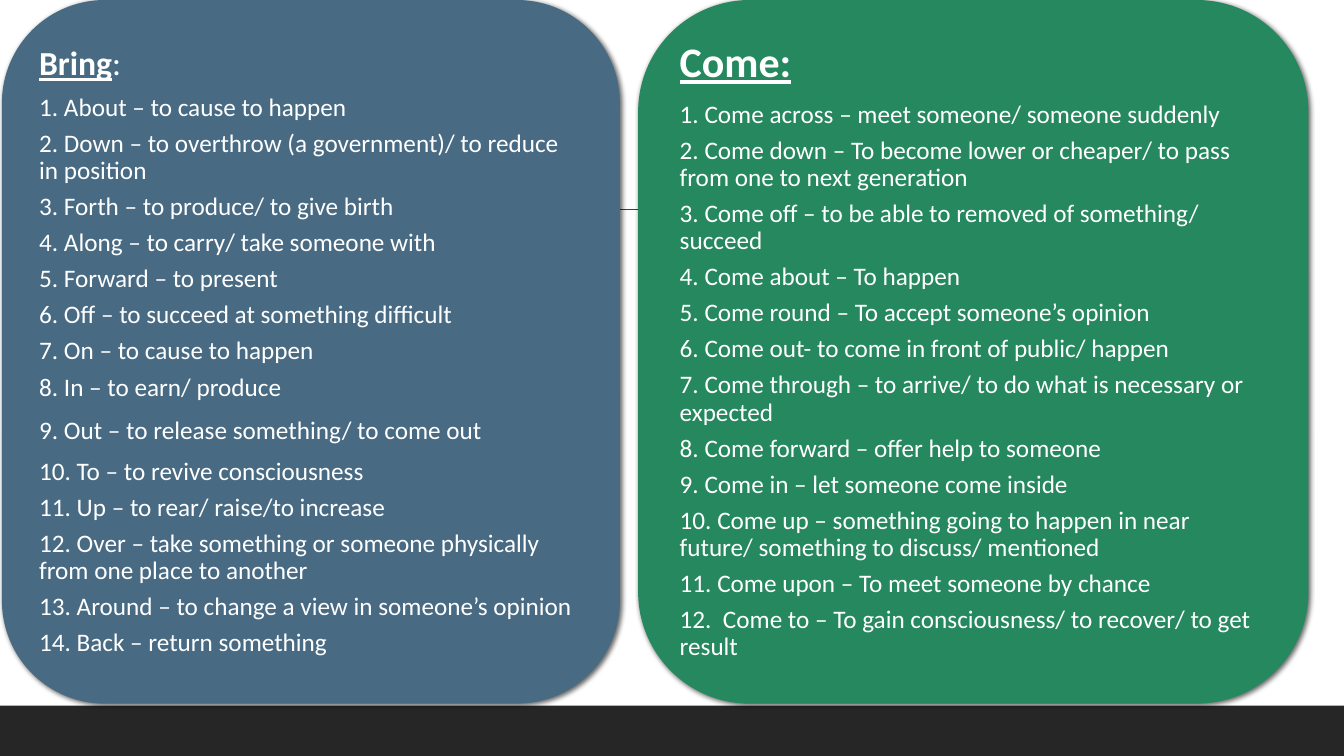
from dataclasses import dataclass

from lxml.etree import SubElement as Sub
from pptx import Presentation
from pptx.dml.color import RGBColor as Rgb
from pptx.enum.shapes import MSO_CONNECTOR as Link, MSO_SHAPE as Form
from pptx.enum.text import MSO_ANCHOR as Anchor, MSO_AUTO_SIZE as Fit, PP_ALIGN as Align
from pptx.oxml.ns import qn
from pptx.util import Pt

HUES = {"bar": "262626", "rule": "404040", "blue": "486B83",
        "green": "26885E", "text": "FFFFFF", "shade": "000000"}
FONT = "Calibri"
WIDE, HIGH = 960, 540
BAR = 36
BODY = 18


@dataclass
class Run:
    text: str
    size: float = BODY
    head: bool = False


@dataclass
class Box:
    left: float
    top: float
    width: float
    height: float


@dataclass
class Panel:
    hue: str
    card: Box
    area: Box
    inset: float
    lines: list[list[Run]]


def items(*texts: str) -> list[list[Run]]:
    return [[Run(f"{num}. {text}")] for num, text in enumerate(texts, 1)]


bring = items(
    "About – to cause to happen",
    "Down – to overthrow (a government)/ to reduce in position",
    "Forth – to produce/ to give birth",
    "Along – to carry/ take someone with",
    "Forward – to present",
    "Off – to succeed at something difficult",
    "On – to cause to happen",
    "In – to earn/ produce",
    "Out – to release something/ to come out",
    "To – to revive consciousness",
    "Up – to rear/ raise/to increase",
    "Over – take something or someone physically from one place to another",
    "Around – to change a view in someone’s opinion",
    "Back – return something",
)
bring[8].append(Run(" ", 24))  # taller line for item 9

come = items(
    "Come across – meet someone/ someone suddenly",
    "Come down – To become lower or cheaper/ to pass from one to next generation",
    "Come off – to be able to removed of something/ succeed",
    "Come about – To happen",
    "Come round – To accept someone’s opinion",
    "Come out- to come in front of public/ happen",
    "Come through – to arrive/ to do what is necessary or expected",
    "Come forward – offer help to someone",
    "Come in – let someone come inside",
    "Come up – something going to happen in near future/ something to discuss/ mentioned",
    "Come upon – To meet someone by chance",
    " Come to – To gain consciousness/ to recover/ to get result",
)

PANELS = [
    Panel("blue", Box(1.4, 0, 441.4, 502.6), Box(23, 21.6, 398.2, 459.4), 5,
          [[Run("Bring", 24, True), Run(":", 24)], *bring]),
    Panel("green", Box(455.8, 0, 478.8, 502.6), Box(479.5, 23, 432, 455.8), 6,
          [[Run("Come:", 30, True)], *come]),
]


def color(name: str) -> Rgb:
    return Rgb.from_string(HUES[name])


def place(shape, box: Box) -> None:
    shape.left, shape.top = Pt(box.left), Pt(box.top)
    shape.width, shape.height = Pt(box.width), Pt(box.height)


def draw(slide, form, box: Box, hue: str):
    shape = slide.shapes.add_shape(form, 0, 0, 0, 0)
    place(shape, box)
    shape.shadow.inherit = False
    shape.fill.solid()
    shape.fill.fore_color.rgb = color(hue)
    shape.line.fill.background()
    return shape


def shade(shape) -> None:
    glow = Sub(shape._element.spPr.find(qn("a:effectLst")), qn("a:outerShdw"),
               blurRad=str(Pt(3)), dist=str(Pt(2)), dir=str(45 * 60000),
               algn="tl", rotWithShape="0")
    tone = Sub(glow, qn("a:srgbClr"), val=HUES["shade"])
    Sub(tone, qn("a:alpha"), val="60000")


def write(par, runs: list[Run]) -> None:
    par.alignment = Align.LEFT
    par.line_spacing = 0.9
    par.space_before = Pt(0)
    par.space_after = Pt(6)
    # Space after is 35% of the line; no bullet, no indent
    props = par._p.get_or_add_pPr()
    after = props.find(qn("a:spcAft"))
    after.clear()
    Sub(after, qn("a:spcPct"), val="35000")
    props.set("marL", "0")
    props.set("indent", "0")
    Sub(props, qn("a:buNone"))
    for part in runs:
        run = par.add_run()
        run.text = part.text
        font = run.font
        font.name, font.size = FONT, Pt(part.size)
        font.bold = font.underline = part.head
        font.color.rgb = color("text")


def fill(slide, panel: Panel, body) -> None:
    shade(draw(slide, Form.FLOWCHART_ALTERNATE_PROCESS, panel.card, panel.hue))
    slide.shapes._spTree.append(body._element)  # list goes above its card
    place(body, panel.area)
    frame = body.text_frame
    frame.word_wrap = True
    frame.auto_size = Fit.NONE
    frame.vertical_anchor = Anchor.MIDDLE
    frame.margin_left = frame.margin_right = Pt(panel.inset)
    frame.margin_top = frame.margin_bottom = Pt(panel.inset)
    for num, runs in enumerate(panel.lines):
        write(frame.add_paragraph() if num else frame.paragraphs[0], runs)


def main() -> None:
    deck = Presentation()
    deck.slide_width, deck.slide_height = Pt(WIDE), Pt(HIGH)
    slide = deck.slides.add_slide(deck.slide_layouts[3])
    title, *lists = slide.placeholders
    title._element.getparent().remove(title._element)

    # Bottom bar and rule
    draw(slide, Form.RECTANGLE, Box(0, HIGH - BAR, WIDE, BAR), "bar")
    rule = slide.shapes.add_connector(Link.STRAIGHT, Pt(94.3), Pt(149.8), Pt(879.1), Pt(149.8))
    rule.line.color.rgb = color("rule")
    rule.line.width = Pt(1)
    Sub(rule._element.spPr, qn("a:effectLst"))

    # Verb panels
    for panel, body in zip(PANELS, lists):
        fill(slide, panel, body)
    deck.save("out.pptx")


if __name__ == "__main__":
    main()
